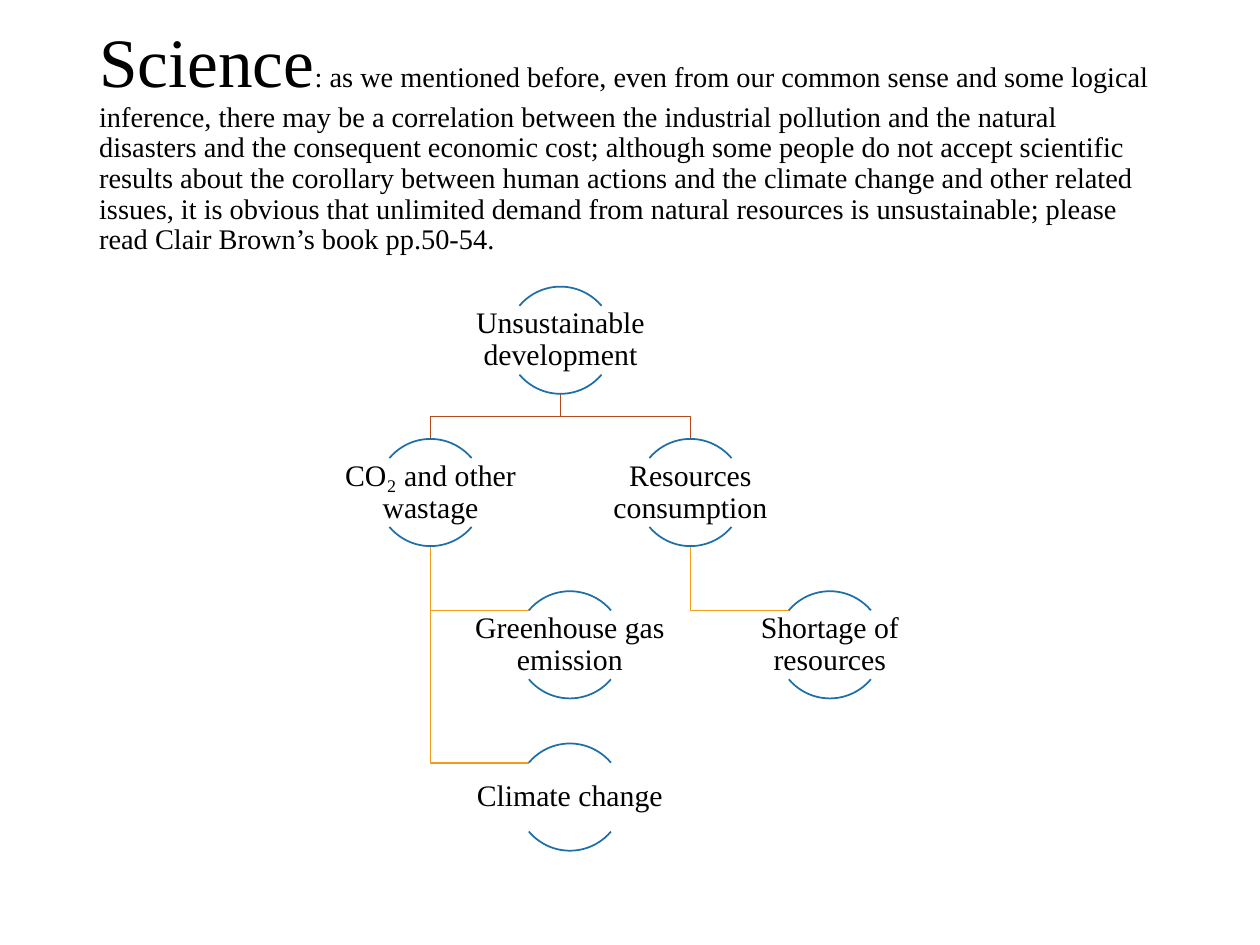
from dataclasses import dataclass

from pptx import Presentation
from pptx import util as u
from pptx.dml.color import RGBColor
from pptx.enum import shapes, text


@dataclass(frozen=True)
class Theme:
    font: str = "Times New Roman"
    ink: str = "000000"
    ring: str = "1D6FA9"
    trunk: str = "B74919"
    twig: str = "F19D19"
    head: float = 39.6
    body: float = 16.2
    node: float = 17
    line: float = 1


THEME = Theme()
RING = 2.16
STEP = 3.07
HALF = 2.62
SHIFT = 2.81
LABEL = (4.32, 1.38)
DROP = (RING - LABEL[1]) / 2
ARCS = ((132, 192), (24, 84))


def style(run, size):
    run.font.name = THEME.font
    run.font.size = u.Pt(size)
    run.font.color.rgb = RGBColor.from_string(THEME.ink)


def stroke(shape, color):
    shape.shadow.inherit = False
    shape.fill.background()
    shape.line.color.rgb = RGBColor.from_string(color)
    shape.line.width = u.Pt(THEME.line)


def add_text(slide, box, words):
    frame = slide.shapes.add_textbox(*map(u.Cm, box)).text_frame
    frame.word_wrap = True
    frame.vertical_anchor = text.MSO_ANCHOR.MIDDLE
    frame.text = words
    frame.paragraphs[0].line_spacing = 0.9
    return frame


def add_title(slide, box, head, body):
    para = add_text(slide, box, head).paragraphs[0]
    para.add_run().text = body
    for run, size in zip(para.runs, (THEME.head, THEME.body)):
        style(run, size)


def add_path(slide, points, color):
    start, *rest = [(u.Cm(x), u.Cm(y)) for x, y in points]
    pen = slide.shapes.build_freeform(*start)
    pen.add_line_segments(rest, close=False)
    stroke(pen.convert_to_shape(), color)


def add_node(slide, mid, top, words):
    for angles in ARCS:
        arc = slide.shapes.add_shape(
            shapes.MSO_SHAPE.ARC,
            *map(u.Cm, (mid - RING / 2, top, RING, RING)))
        arc.adjustments[0], arc.adjustments[1] = angles
        stroke(arc, THEME.ring)
    frame = add_text(slide, (mid - LABEL[0] / 2, top + DROP, *LABEL), words)
    frame.margin_left = frame.margin_right = u.Cm(0.03)
    frame.margin_top = frame.margin_bottom = u.Cm(0.03)
    para = frame.paragraphs[0]
    para.alignment = text.PP_ALIGN.CENTER
    style(para.runs[0], THEME.node)


def add_tree(slide, left, top, root, limbs):
    mid = left + LABEL[0] / 2 + HALF
    nodes = [(mid, top, root)]
    base, next_top = top + RING, top + STEP
    fork = (base + next_top) / 2
    for side, (limb, leaves) in zip((-1, 1), limbs):
        x = mid + side * HALF
        nodes.append((x, next_top, limb))
        add_path(slide, [(mid, base), (mid, fork), (x, fork), (x, next_top)],
                 THEME.trunk)
        for row, leaf in enumerate(leaves, 2):
            y = top + row * STEP
            nodes.append((x + SHIFT, y, leaf))
            turn = y + DROP
            add_path(slide, [(x, next_top + RING), (x, turn),
                             (x + SHIFT - 0.83, turn)], THEME.twig)
    for node in nodes:
        add_node(slide, *node)


def main():
    deck = Presentation()
    deck.slide_width, deck.slide_height = u.Cm(25.4), u.Cm(19.05)
    slide = deck.slides.add_slide(deck.slide_layouts[6])
    add_title(
        slide, (1.75, 1.02, 21.9, 3.68), "Science",
        ": as we mentioned before, even from our common sense and some "
        "logical inference, there may be a correlation between the "
        "industrial pollution and the natural disasters and the consequent "
        "economic cost; although some people do not accept scientific "
        "results about the corollary between human actions and the climate "
        "change and other related issues, it is obvious that unlimited "
        "demand from natural resources is unsustainable; please read Clair "
        "Brown’s book pp.50-54.")
    add_tree(slide, 6.52, 5.78, "Unsustainable development", [
        ("CO₂ and other wastage",
         ["Greenhouse gas emission", "Climate change"]),
        ("Resources consumption", ["Shortage of resources"])])
    deck.save("out.pptx")


if __name__ == "__main__":
    main()
